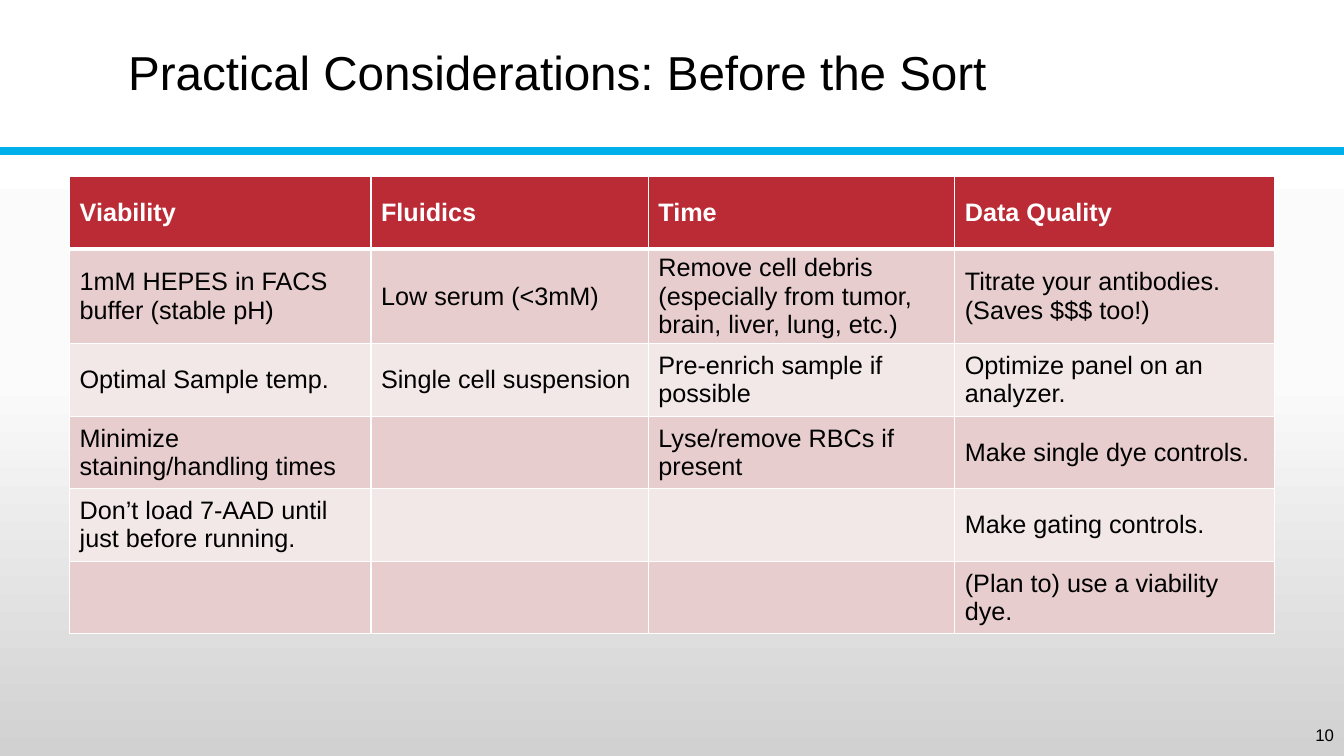
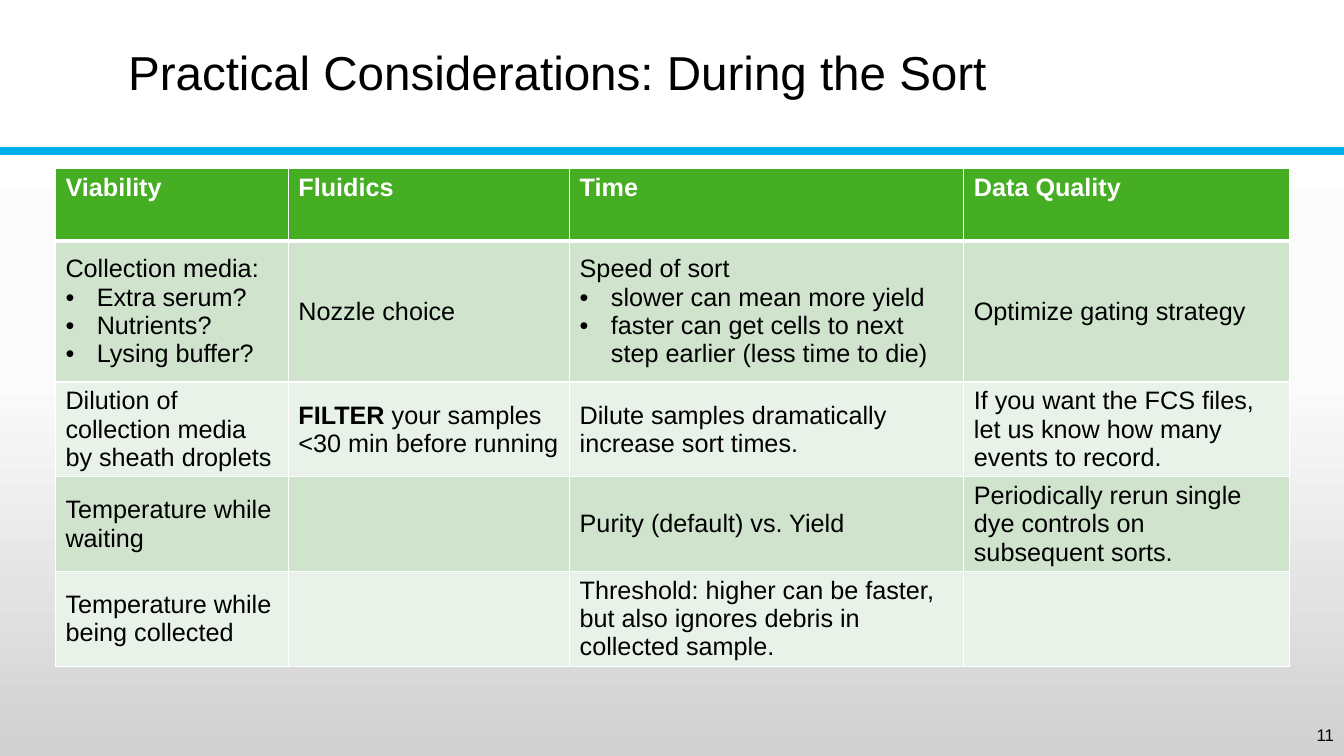
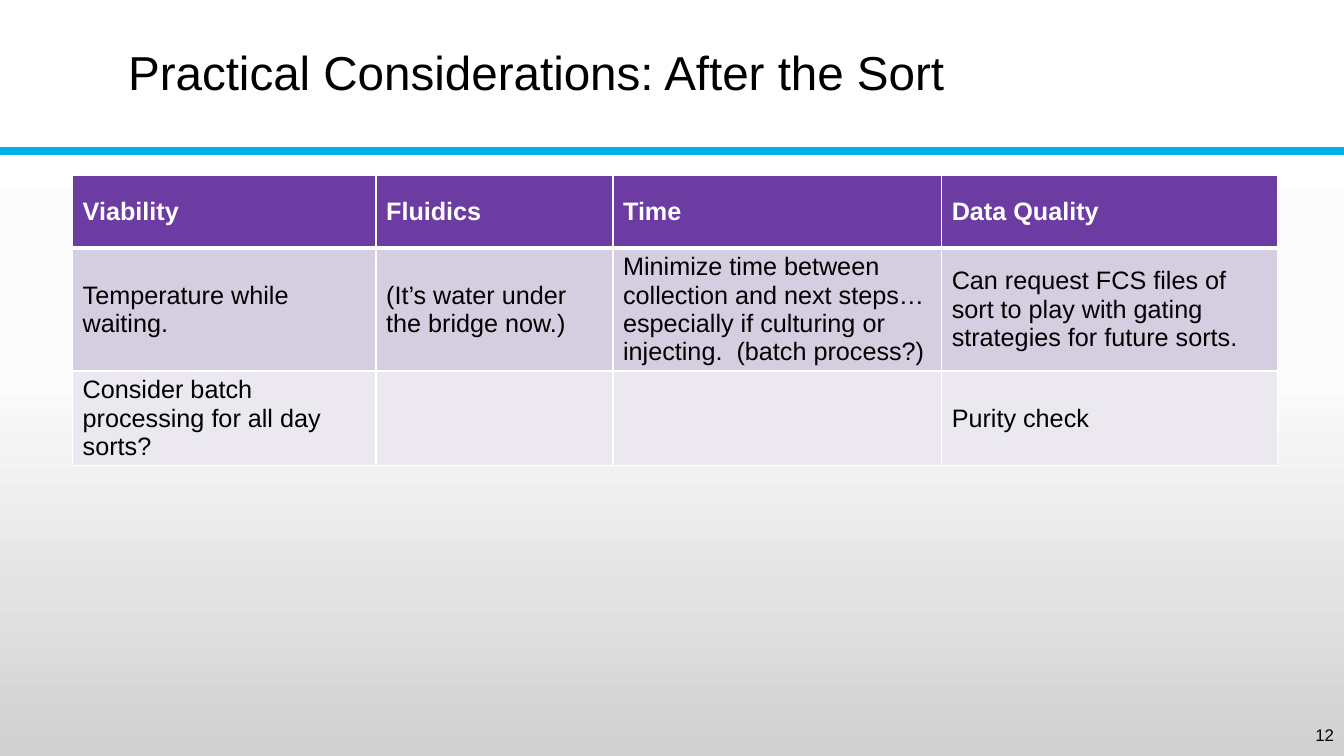
from copy import deepcopy

from lxml import etree
from pptx import Presentation
from pptx.dml.color import RGBColor
from pptx.enum.shapes import MSO_CONNECTOR, MSO_SHAPE
from pptx.enum.text import MSO_ANCHOR, MSO_AUTO_SIZE, PP_ALIGN
from pptx.oxml.ns import qn
from pptx.util import Inches, Pt

RECTANGLE = MSO_SHAPE.RECTANGLE
STRAIGHT = MSO_CONNECTOR.STRAIGHT
TOP, MIDDLE = MSO_ANCHOR.TOP, MSO_ANCHOR.MIDDLE
LEFT, RIGHT = PP_ALIGN.LEFT, PP_ALIGN.RIGHT
NO_AUTOFIT = MSO_AUTO_SIZE.NONE

FONT = "Arial"
BLACK, WHITE, RULE_BLUE = "000000", "FFFFFF", "00B0EA"
BACKGROUND_STOPS = [(0, "FFFFFF"), (0.5, "FBFBFB"), (1, "D1D1D1")]
SLIDE_WIDTH, SLIDE_HEIGHT = 13.33, 7.5
BAND_HEIGHT = 1.5
FIRST_NUMBER = 10
BULLET = "• "
BULLET_INDENT = 0.31
BOLD_MARK = "**"

HEADINGS = ["Viability", "Fluidics", "Time", "Data Quality"]

# Body cells: one string, or a tuple of paragraphs
SLIDES = [
    {
        "title": "Practical Considerations: Before the Sort",
        "position": (0.69, 1.75),
        "columns": [2.99, 2.75, 3.04, 3.17],
        "heights": [0.72, 0.78, 0.72, 0.72, 0.72, 0.72],
        "header_anchor": MIDDLE,
        "header_fill": "BB2B35",
        "band_fills": ("E7CDCE", "F3E8E8"),
        "rows": [
            ["1mM HEPES in FACS buffer (stable pH)", "Low serum (<3mM)",
             "Remove cell debris (especially from tumor, brain, liver, lung, etc.)",
             ("Titrate your antibodies.", "(Saves $$$ too!)")],
            ["Optimal Sample temp.", "Single cell suspension",
             "Pre-enrich sample if possible", "Optimize panel on an analyzer."],
            ["Minimize staining/handling times", "",
             "Lyse/remove RBCs if present", "Make single dye controls."],
            ["Don’t load 7-AAD until just before running.", "", "",
             "Make gating controls."],
            ["", "", "", "(Plan to) use a viability dye."],
        ],
    },
    {
        "title": "Practical Considerations: During the Sort",
        "position": (0.55, 1.67),
        "columns": [2.31, 2.79, 3.91, 3.23],
        "heights": [0.72, 1.4, 0.72, 0.72, 0.72],
        "header_anchor": TOP,
        "header_fill": "45AE22",
        "band_fills": ("CFE3CD", "E9F2E8"),
        "rows": [
            [("Collection media:", "• Extra serum?", "• Nutrients?", "• Lysing buffer?"),
             "Nozzle choice",
             ("Speed of sort", "• slower can mean more yield",
              "• faster can get cells to next step earlier (less time to die)"),
             "Optimize gating strategy"],
            ["Dilution of collection media by sheath droplets",
             "**FILTER** your samples <30 min before running",
             "Dilute samples dramatically increase sort times.",
             "If you want the FCS files, let us know how many events to record."],
            ["Temperature while waiting", "", "Purity (default) vs. Yield",
             "Periodically rerun single dye controls on subsequent sorts."],
            ["Temperature while being collected", "",
             "Threshold: higher can be faster, but also ignores debris in collected sample.",
             ""],
        ],
    },
    {
        "title": "Practical Considerations: After the Sort",
        "position": (0.72, 1.74),
        "columns": [3.01, 2.35, 3.26, 3.33],
        "heights": [0.72, 0.78, 0.72],
        "header_anchor": MIDDLE,
        "header_fill": "6C3CA2",
        "band_fills": ("D4CEE0", "EBE8F0"),
        "rows": [
            ["Temperature while waiting.", "(It’s water under the bridge now.)",
             "Minimize time between collection and next steps… especially if "
             "culturing or injecting.  (batch process?)",
             "Can request FCS files of sort to play with gating strategies for future sorts."],
            ["Consider batch processing for all day sorts?", "", "", "Purity check"],
        ],
    },
]


def rgb(value):
    return RGBColor.from_string(value)


def set_font(paragraph, size, color=BLACK, bold=False):
    font = paragraph.font
    font.name, font.size, font.bold = FONT, Pt(size), bold
    font.color.rgb = rgb(color)


def style_background(layout):
    fill = layout.background.fill
    fill.gradient()
    fill.gradient_angle = 270
    stop_list = layout.element.xpath(".//p:bg//a:gsLst")[0]
    stop_list.append(deepcopy(stop_list[-1]))
    for stop, (position, color) in zip(fill.gradient_stops, BACKGROUND_STOPS):
        stop.position = position
        stop.color.rgb = rgb(color)


def style_layout(layout, slide):
    """Give the layout its background, title place, white band and blue rule."""
    style_background(layout)
    title = layout.placeholders[0]
    title.left, title.top = Inches(1.17), Inches(0.14)
    title.width, title.height = Inches(11), Inches(1.2)

    band = slide.shapes.add_shape(RECTANGLE, 0, 0, Inches(SLIDE_WIDTH), Inches(BAND_HEIGHT))
    band.shadow.inherit = False
    band.fill.solid()
    band.fill.fore_color.rgb = rgb(WHITE)
    band.line.fill.background()

    rule = slide.shapes.add_connector(
        STRAIGHT, 0, Inches(BAND_HEIGHT), Inches(SLIDE_WIDTH), Inches(BAND_HEIGHT))
    rule.line.color.rgb = rgb(RULE_BLUE)
    rule.line.width = Pt(6)
    etree.SubElement(rule.element.spPr, qn("a:effectLst"))

    # Layouts cannot add shapes, so both move there, behind the title
    for index, shape in enumerate((band, rule)):
        layout.shapes.element.insert(2 + index, shape.element)


def add_title(slide, text):
    frame = slide.shapes.title.text_frame
    frame.text = text
    frame.vertical_anchor = MIDDLE
    frame.auto_size = NO_AUTOFIT
    paragraph = frame.paragraphs[0]
    paragraph.alignment = LEFT
    paragraph.line_spacing = 0.9
    set_font(paragraph, 34)


def add_slide_number(slide, number):
    box = slide.shapes.add_textbox(Inches(12.76), Inches(7.14), Inches(0.57), Inches(0.3))
    frame = box.text_frame
    frame.word_wrap = True
    frame.vertical_anchor = MIDDLE
    paragraph = frame.paragraphs[0]
    paragraph.text = str(number)
    paragraph.alignment = RIGHT
    set_font(paragraph, 12)


def add_bullet(paragraph):
    properties = paragraph._p.get_or_add_pPr()
    properties.set("marL", str(Inches(BULLET_INDENT)))
    properties.set("indent", str(-Inches(BULLET_INDENT)))
    etree.SubElement(properties, qn("a:buFont")).set("typeface", FONT)
    etree.SubElement(properties, qn("a:buChar")).set("char", BULLET.strip())


def set_borders(cell, top, bottom):
    properties = cell._tc.get_or_add_tcPr()
    for side, width in (("L", 1), ("R", 1), ("T", top), ("B", bottom)):
        line = etree.SubElement(properties, qn(f"a:ln{side}"), w=str(Pt(width)))
        fill = etree.SubElement(line, qn("a:solidFill"))
        etree.SubElement(fill, qn("a:srgbClr"), val=WHITE)


def write_cell(cell, content, color, bold):
    texts = (content,) if isinstance(content, str) else content
    frame = cell.text_frame
    for index, text in enumerate(texts):
        paragraph = frame.add_paragraph() if index else frame.paragraphs[0]
        if text.startswith(BULLET):
            add_bullet(paragraph)
            text = text.removeprefix(BULLET)
        set_font(paragraph, 18, color, bold)
        for part_index, part in enumerate(text.split(BOLD_MARK)):
            if part:
                run = paragraph.add_run()
                run.text = part
                if part_index % 2:
                    run.font.bold = True


def add_considerations_table(slide, content):
    rows = [HEADINGS] + content["rows"]
    columns, heights = content["columns"], content["heights"]
    left, top = content["position"]
    table = slide.shapes.add_table(
        len(rows), len(columns), Inches(left), Inches(top),
        Inches(sum(columns)), Inches(sum(heights))).table
    table.horz_banding = False
    for column, width in zip(table.columns, columns):
        column.width = Inches(width)
    for row_index, (row, height) in enumerate(zip(rows, heights)):
        table.rows[row_index].height = Inches(height)
        is_header = row_index == 0
        fill = content["header_fill"] if is_header else content["band_fills"][(row_index - 1) % 2]
        for column_index, text in enumerate(row):
            cell = table.cell(row_index, column_index)
            cell.vertical_anchor = content["header_anchor"] if is_header else MIDDLE
            set_borders(cell, 3 if row_index == 1 else 1, 3 if is_header else 1)
            cell.fill.solid()
            cell.fill.fore_color.rgb = rgb(fill)
            write_cell(cell, text, WHITE if is_header else BLACK, is_header)


def main():
    presentation = Presentation()
    presentation.slide_width = Inches(SLIDE_WIDTH)
    presentation.slide_height = Inches(SLIDE_HEIGHT)
    layout = presentation.slide_layouts.get_by_name("Title Only")
    for index, content in enumerate(SLIDES):
        slide = presentation.slides.add_slide(layout)
        if index == 0:
            style_layout(layout, slide)
        add_title(slide, content["title"])
        add_considerations_table(slide, content)
        add_slide_number(slide, FIRST_NUMBER + index)
    presentation.save("out.pptx")


if __name__ == "__main__":
    main()
